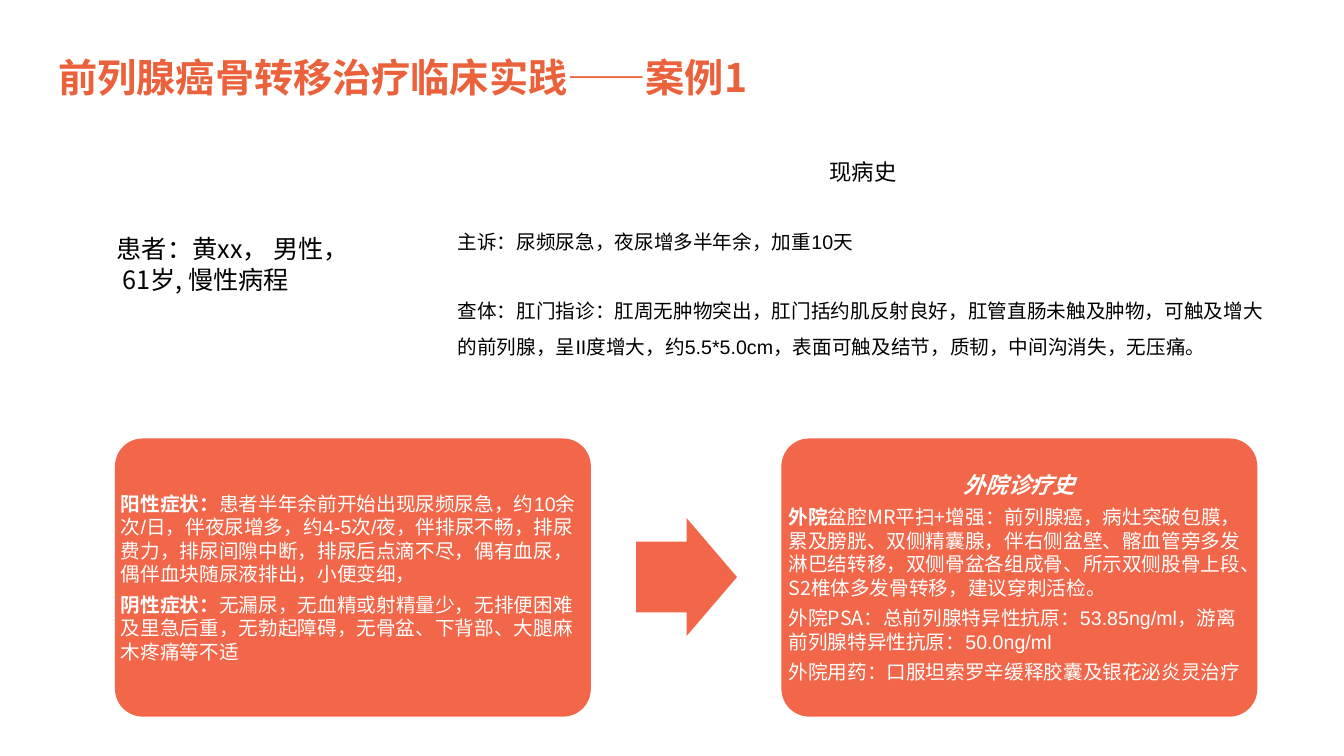
from lxml.etree import SubElement
from pptx import Presentation
from pptx.dml.color import RGBColor
from pptx.enum.shapes import MSO_SHAPE
from pptx.enum.text import MSO_ANCHOR, PP_ALIGN
from pptx.oxml.ns import qn
from pptx.util import Inches, Pt

TITLE_ORANGE = RGBColor(0xEB, 0x61, 0x3B)
ORANGE = RGBColor(0xF2, 0x66, 0x49)
WHITE = RGBColor(0xFF, 0xFF, 0xFF)
BLACK = RGBColor(0x00, 0x00, 0x00)
CJK = "Noto Sans CJK SC"
LATIN = "Arial"


def write(shape, paragraphs, color, anchor=MSO_ANCHOR.TOP, margins=(0.1, 0.05)):
    frame = shape.text_frame
    horizontal, vertical = (Inches(margin) for margin in margins)
    settings = {
        "word_wrap": True, "vertical_anchor": anchor,
        "margin_left": horizontal, "margin_right": horizontal,
        "margin_top": vertical, "margin_bottom": vertical,
    }
    for name, value in settings.items():
        setattr(frame, name, value)
    for index, (layout, runs) in enumerate(paragraphs):
        paragraph = frame.add_paragraph() if index else frame.paragraphs[0]
        for name, value in layout.items():
            setattr(paragraph, name, value)
        for text, size, typeface, bold, italic in runs:
            run = paragraph.add_run()
            run.text = text
            formats = {"size": Pt(size), "name": typeface, "bold": bold, "italic": italic}
            for name, value in formats.items():
                setattr(run.font, name, value)
            run.font.color.rgb = color
            east_asian = SubElement(run.font._element, qn("a:ea"))
            east_asian.set("typeface", CJK)


def add_orange_shape(kind, box, adjustments):
    shape = slide.shapes.add_shape(kind, *map(Inches, box))
    shape.shadow.inherit = False
    shape.fill.solid()
    shape.fill.fore_color.rgb = ORANGE
    shape.line.fill.background()
    for index, adjustment in enumerate(adjustments):
        shape.adjustments[index] = adjustment


presentation = Presentation()
presentation.slide_width = Inches(13.33)
presentation.slide_height = Inches(7.5)
slide = presentation.slides.add_slide(presentation.slide_layouts[5])

title = slide.shapes.title
title_box = {"left": 0.48, "top": 0.38, "width": 12, "height": 0.77}
for name, value in title_box.items():
    setattr(title, name, Inches(value))
write(title, [
    ({"alignment": PP_ALIGN.LEFT}, [("前列腺癌骨转移治疗临床实践——案例1", 28, CJK, True, False)]),
], TITLE_ORANGE, MSO_ANCHOR.MIDDLE)

patient = slide.shapes.add_textbox(Inches(1.06), Inches(2.27), Inches(2.49), Inches(0.71))
write(patient, [({}, [("患者：黄xx， 男性， 61岁, 慢性病程", 18, CJK, False, False)])], BLACK)

after = {"space_after": Pt(5)}
symptoms = [
    (after, [
        ("阳性症状：", 14, LATIN, True, False),
        ("患者半年余前开始出现尿频尿急，约10余次/日，伴夜尿增多，约4-5次/夜，伴排尿不畅，排尿费力，"
         "排尿间隙中断，排尿后点滴不尽，偶有血尿，偶伴血块随尿液排出，小便变细，", 14, LATIN, False, False),
    ]),
    (after, [
        ("阴性症状：", 14, LATIN, True, False),
        ("无漏尿，无血精或射精量少，无排便困难及里急后重，无勃起障碍，无骨盆、下背部、"
         "大腿麻木疼痛等不适", 14, LATIN, False, False),
    ]),
]
outside_care = [
    (after | {"alignment": PP_ALIGN.CENTER}, [("外院诊疗史", 16, LATIN, True, True)]),
    (after, [
        ("外院", 14, CJK, True, False),
        ("盆腔MR平扫+增强：前列腺癌，病灶突破包膜，累及膀胱、双侧精囊腺，伴右侧盆壁、髂血管旁多发淋巴结转移，"
         "双侧骨盆各组成骨、所示双侧股骨上段、S2椎体多发骨转移，建议穿刺活检。", 14, CJK, False, False),
    ]),
    (after, [
        ("外院PSA：", 14, CJK, False, False),
        ("总前列腺特异性抗原：53.85ng/ml，游离前列腺特异性抗原：50.0ng/ml", 14, LATIN, False, False),
    ]),
    (after, [("外院用药：口服坦索罗辛缓释胶囊及银花泌炎灵治疗", 14, LATIN, False, False)]),
]
for left, margin, paragraphs in [(1.14, 0.06, symptoms), (7.75, 0.07, outside_care)]:
    card = (left, 4.35, 4.72, 2.76)
    add_orange_shape(MSO_SHAPE.ROUNDED_RECTANGLE, card, [0.1])
    card_text = slide.shapes.add_textbox(*map(Inches, card))
    write(card_text, paragraphs, WHITE, MSO_ANCHOR.MIDDLE, (margin, margin))
add_orange_shape(MSO_SHAPE.RIGHT_ARROW, (6.31, 5.14, 1, 1.17), [0.6, 0.5])

history = slide.shapes.add_textbox(Inches(4.44), Inches(1.52), Inches(8.24), Inches(2.46))
spaced = {"line_spacing": 1.5, "space_before": Pt(24)}
write(history, [
    ({"alignment": PP_ALIGN.CENTER}, [("现病史", 16, CJK, False, False)]),
    (spaced, [
        ("主诉：", 14, CJK, False, False),
        ("尿频尿急，夜尿增多半年余，加重10天", 14, LATIN, False, False),
    ]),
    (spaced, [
        ("查体：肛门指诊：肛周无肿物突出，肛门括约肌反射良好，肛管直肠未触及肿物，可触及增大的前列腺，"
         "呈II度增大，约5.5*5.0cm，表面可触及结节，质韧，中间沟消失，无压痛。", 14, LATIN, False, False),
    ]),
], BLACK)

presentation.save("out.pptx")
